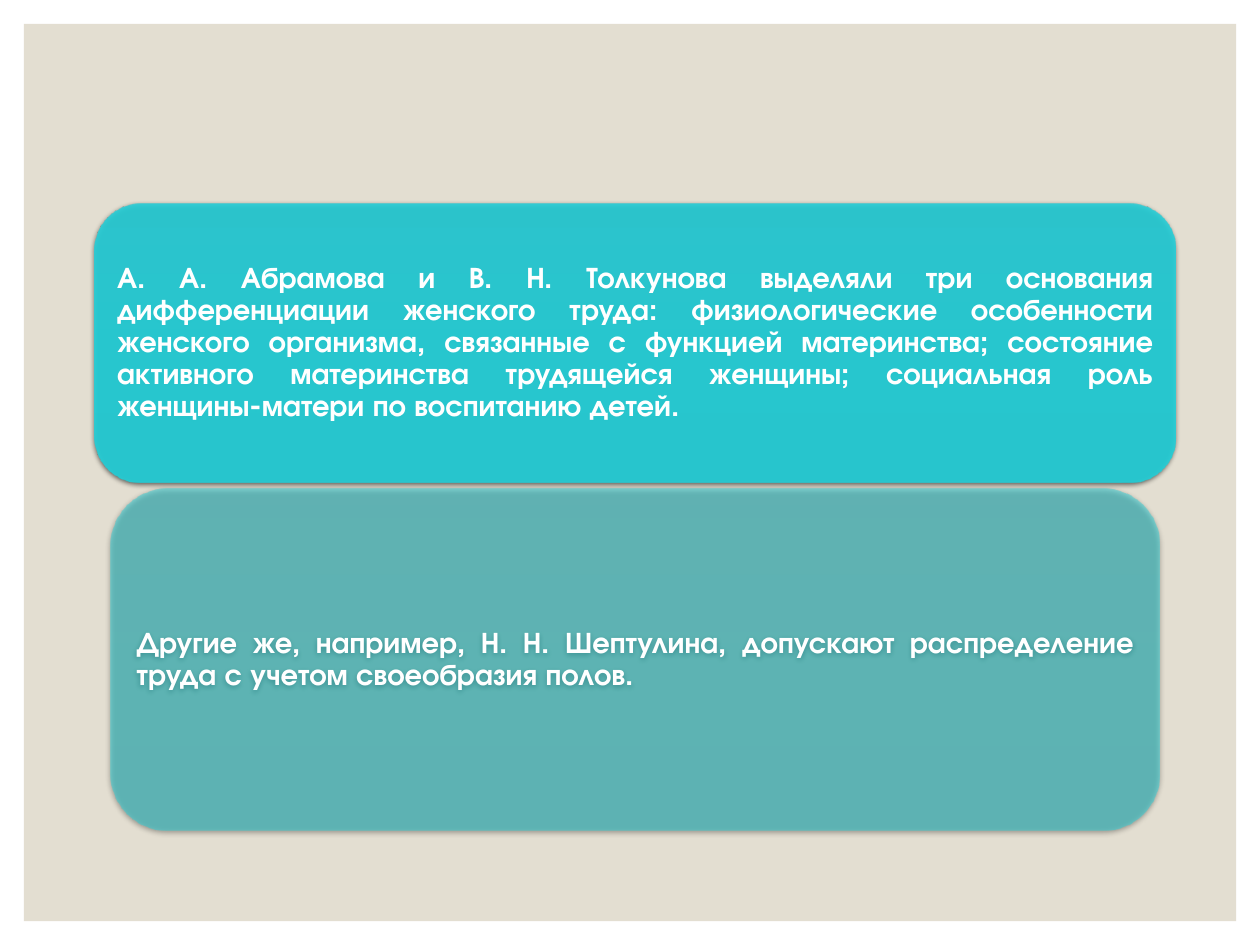
"""Build a slide with two rounded statement cards on a beige panel."""
import dataclasses

import pptx
import pptx.dml.color
import pptx.enum.shapes
import pptx.enum.text
import pptx.oxml
import pptx.oxml.ns
import pptx.shapes.autoshape
import pptx.slide
import pptx.util

Cm = pptx.util.Cm
Shapes = pptx.enum.shapes.MSO_SHAPE


@dataclasses.dataclass(frozen=True)
class Theme:
    panel: str = "E3DED1"
    text: str = "FFFFFF"
    shadow: str = "000000"
    gradient: tuple[tuple[int, str], ...] = ((0, "27CED7"), (50, "22D1DA"), (100, "22D0D9"))
    font: str = "TeX Gyre Adventor"
    size: int = 17


@dataclasses.dataclass(frozen=True)
class Card:
    left: float
    top: float
    width: float
    height: float
    opacity: int
    text: str


THEME = Theme()
CARDS = (
    Card(1.91, 4.11, 21.79, 5.61, 90,
         "А. А. Абрамова и В. Н. Толкунова выделяли три основания дифференциации "
         "женского труда: физиологические особенности женского организма, связанные "
         "с функцией материнства; состояние активного материнства трудящейся женщины; "
         "социальная роль женщины-матери по воспитанию детей."),
    Card(2.24, 9.86, 21.13, 6.88, 50,
         "Другие же, например, Н. Н. Шептулина, допускают распределение труда "
         "с учетом своеобразия полов."),
)


def rgb(value: str) -> pptx.dml.color.RGBColor:
    return pptx.dml.color.RGBColor.from_string(value)


def color_xml(value: str, opacity: int) -> str:
    return f'<a:srgbClr val="{value}"><a:alpha val="{opacity * 1000}"/></a:srgbClr>'


def add_panel(page: pptx.slide.Slide) -> None:
    margin = 0.48
    panel = page.shapes.add_shape(
        Shapes.RECTANGLE, Cm(margin), Cm(margin), Cm(25.4 - 2 * margin), Cm(19.05 - 2 * margin))
    panel.shadow.inherit = False
    panel.fill.solid()
    panel.fill.fore_color.rgb = rgb(THEME.panel)
    panel.line.fill.background()


def style_card(box: pptx.shapes.autoshape.Shape, opacity: int) -> None:
    namespace = pptx.oxml.ns.nsdecls("a")
    stops = "".join(f'<a:gs pos="{position * 1000}">{color_xml(color, opacity)}</a:gs>'
                    for position, color in THEME.gradient)
    box.line.fill.background()
    box.shadow.inherit = False
    properties = box.element.spPr
    properties.find(pptx.oxml.ns.qn("a:ln")).addprevious(pptx.oxml.parse_xml(
        f'<a:gradFill {namespace} rotWithShape="1"><a:gsLst>{stops}</a:gsLst>'
        '<a:lin ang="5400000" scaled="0"/></a:gradFill>'))
    properties.find(pptx.oxml.ns.qn("a:effectLst")).append(pptx.oxml.parse_xml(
        f'<a:outerShdw {namespace} blurRad="{pptx.util.Pt(3)}" dist="{pptx.util.Pt(1)}" '
        f'dir="5400000" algn="ctr" rotWithShape="0">{color_xml(THEME.shadow, 63)}</a:outerShdw>'))


def add_card(page: pptx.slide.Slide, card: Card) -> None:
    box = page.shapes.add_shape(
        Shapes.ROUNDED_RECTANGLE, Cm(card.left), Cm(card.top), Cm(card.width), Cm(card.height))
    style_card(box, card.opacity)
    frame = box.text_frame
    frame.word_wrap = True
    frame.vertical_anchor = pptx.enum.text.MSO_ANCHOR.MIDDLE
    frame.margin_left = frame.margin_right = frame.margin_top = frame.margin_bottom = Cm(0.18)
    para = frame.paragraphs[0]
    para.alignment = pptx.enum.text.PP_ALIGN.JUSTIFY
    para.line_spacing = 0.9
    span = para.add_run()
    span.text = card.text
    span.font.name = THEME.font
    span.font.size = pptx.util.Pt(THEME.size)
    span.font.bold = True
    span.font.color.rgb = rgb(THEME.text)


def main() -> None:
    deck = pptx.Presentation()
    deck.slide_width, deck.slide_height = Cm(25.4), Cm(19.05)
    page = deck.slides.add_slide(deck.slide_layouts[6])
    add_panel(page)
    for card in CARDS:
        add_card(page, card)
    deck.save("out.pptx")


if __name__ == "__main__":
    main()
